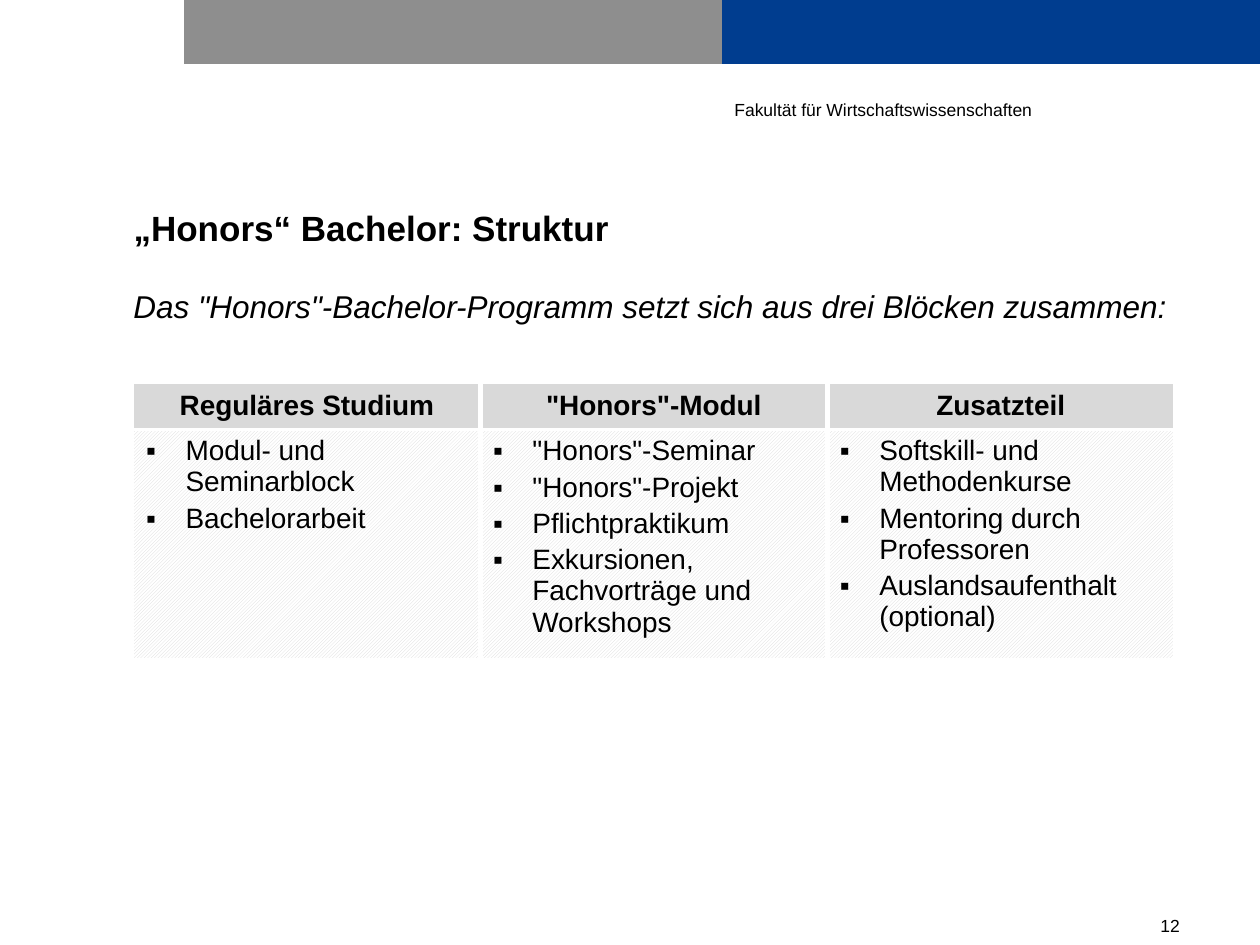
from lxml import etree
from pptx import Presentation
from pptx.dml.color import RGBColor
from pptx.enum.dml import MSO_PATTERN
from pptx.enum.shapes import MSO_SHAPE
from pptx.enum.text import MSO_ANCHOR, PP_ALIGN
from pptx.oxml.ns import qn
from pptx.util import Pt

RECTANGLE = MSO_SHAPE.RECTANGLE
HATCH = MSO_PATTERN.LIGHT_UPWARD_DIAGONAL
TOP, MIDDLE = MSO_ANCHOR.TOP, MSO_ANCHOR.MIDDLE
LEFT, CENTER, RIGHT = PP_ALIGN.LEFT, PP_ALIGN.CENTER, PP_ALIGN.RIGHT

BLACK = RGBColor(0x00, 0x00, 0x00)
WHITE = RGBColor(0xFF, 0xFF, 0xFF)
BAND_GREY = RGBColor(0x8E, 0x8E, 0x8E)
BAND_BLUE = RGBColor(0x00, 0x3D, 0x8F)
CELL_GREY = RGBColor(0xD9, 0xD9, 0xD9)

FONT = "Arial"
CONTENT_LEFT, CONTENT_WIDTH = 76.3, 594.7
BAND_LEFT, BAND_WIDTH, BAND_HEIGHT = 105.2, 307.4, 36.6
BULLET_INDENT = 22.5
COLUMN_RULE, HEADER_RULE = 3, 2.25

BLOCKS = [
    ("Reguläres Studium", ["Modul- und Seminarblock", "Bachelorarbeit"]),
    ('"Honors"-Modul', ['"Honors"-Seminar', '"Honors"-Projekt', "Pflichtpraktikum",
                        "Exkursionen, Fachvorträge und Workshops"]),
    ("Zusatzteil", ["Softskill- und Methodenkurse", "Mentoring durch Professoren",
                    "Auslandsaufenthalt (optional)"]),
]


def format_paragraph(paragraph, size, bold=False, italic=False, align=LEFT):
    paragraph.alignment = align
    for run in paragraph.runs:
        font = run.font
        font.name, font.size = FONT, Pt(size)
        font.bold, font.italic = bold, italic
        font.color.rgb = BLACK


def remove_insets(frame):
    frame.margin_left = frame.margin_right = Pt(0)
    frame.margin_top = frame.margin_bottom = Pt(0)


def add_band(slide, left, color):
    band = slide.shapes.add_shape(RECTANGLE, Pt(left), Pt(0), Pt(BAND_WIDTH), Pt(BAND_HEIGHT))
    band.shadow.inherit = False
    band.fill.solid()
    band.fill.fore_color.rgb = color
    band.line.fill.background()


def add_text(slide, text, left, top, width, height, size, **style):
    box = slide.shapes.add_textbox(Pt(left), Pt(top), Pt(width), Pt(height))
    frame = box.text_frame
    frame.word_wrap = True
    frame.text = text
    format_paragraph(frame.paragraphs[0], size, **style)
    return frame


def set_title(slide, text):
    title = slide.shapes.title
    title.left, title.top = Pt(CONTENT_LEFT), Pt(113)
    title.width, title.height = Pt(CONTENT_WIDTH), Pt(32.4)
    frame = title.text_frame
    frame.text = text
    frame.vertical_anchor = MIDDLE
    remove_insets(frame)
    heading = frame.paragraphs[0]
    heading.line_spacing = Pt(26)
    heading.space_before = Pt(0)
    format_paragraph(heading, 20, bold=True)


def add_border(cell, side, width):
    properties = cell._tc.get_or_add_tcPr()
    line = etree.SubElement(properties, qn(f"a:ln{side}"), w=str(Pt(width)))
    fill = etree.SubElement(line, qn("a:solidFill"))
    etree.SubElement(fill, qn("a:srgbClr"), val=str(WHITE))


def add_bullet(paragraph):
    properties = paragraph._p.get_or_add_pPr()
    properties.set("marL", str(Pt(BULLET_INDENT)))
    properties.set("indent", str(-Pt(BULLET_INDENT)))
    etree.SubElement(properties, qn("a:buFont"), typeface=FONT)
    etree.SubElement(properties, qn("a:buChar"), char="▪")


def fill_header_cell(cell, text):
    cell.text = text
    cell.vertical_anchor = MIDDLE
    cell.fill.solid()
    cell.fill.fore_color.rgb = CELL_GREY
    format_paragraph(cell.text_frame.paragraphs[0], 16, bold=True, align=CENTER)


def fill_list_cell(cell, items):
    cell.text = "\n".join(items)
    cell.vertical_anchor = TOP
    cell.fill.patterned()
    cell.fill.pattern = HATCH
    cell.fill.fore_color.rgb = CELL_GREY
    cell.fill.back_color.rgb = WHITE
    for paragraph in cell.text_frame.paragraphs:
        add_bullet(paragraph)
        paragraph.space_after = Pt(3)
        format_paragraph(paragraph, 16)


def add_block_table(slide):
    row_heights = (25.2, 122.8)
    table = slide.shapes.add_table(
        2, len(BLOCKS), Pt(CONTENT_LEFT), Pt(218.9),
        Pt(CONTENT_WIDTH), Pt(sum(row_heights))).table
    table.horz_banding = False
    for row, height in zip(table.rows, row_heights):
        row.height = Pt(height)
    for column, (heading, items) in enumerate(BLOCKS):
        table.columns[column].width = Pt(CONTENT_WIDTH / len(BLOCKS))
        header_cell, list_cell = table.cell(0, column), table.cell(1, column)
        # White rules between the cells
        for cell, rule_side in ((header_cell, "B"), (list_cell, "T")):
            if column > 0:
                add_border(cell, "L", COLUMN_RULE)
            if column < len(BLOCKS) - 1:
                add_border(cell, "R", COLUMN_RULE)
            add_border(cell, rule_side, HEADER_RULE)
        fill_header_cell(header_cell, heading)
        fill_list_cell(list_cell, items)


def main():
    presentation = Presentation()
    presentation.slide_width, presentation.slide_height = Pt(720), Pt(540)
    slide = presentation.slides.add_slide(presentation.slide_layouts[5])

    # Header bands and faculty name
    for index, color in enumerate((BAND_GREY, BAND_BLUE)):
        add_band(slide, BAND_LEFT + index * BAND_WIDTH, color)
    add_text(slide, "Fakultät für Wirtschaftswissenschaften", 412.6, 53.3, 232.6, 31.7, 10)

    # Title and introduction
    set_title(slide, "„Honors“ Bachelor: Struktur")
    introduction = add_text(
        slide, 'Das "Honors"-Bachelor-Programm setzt sich aus drei Blöcken zusammen:',
        CONTENT_LEFT, 155.5, CONTENT_WIDTH, 363.6, 18, italic=True)
    remove_insets(introduction)
    introduction.paragraphs[0].line_spacing = Pt(30)

    # Page number
    add_text(slide, "12", 513.4, 519.1, 167.8, 28.8, 10, align=RIGHT)

    # Programme blocks
    add_block_table(slide)

    presentation.save("out.pptx")


if __name__ == "__main__":
    main()
